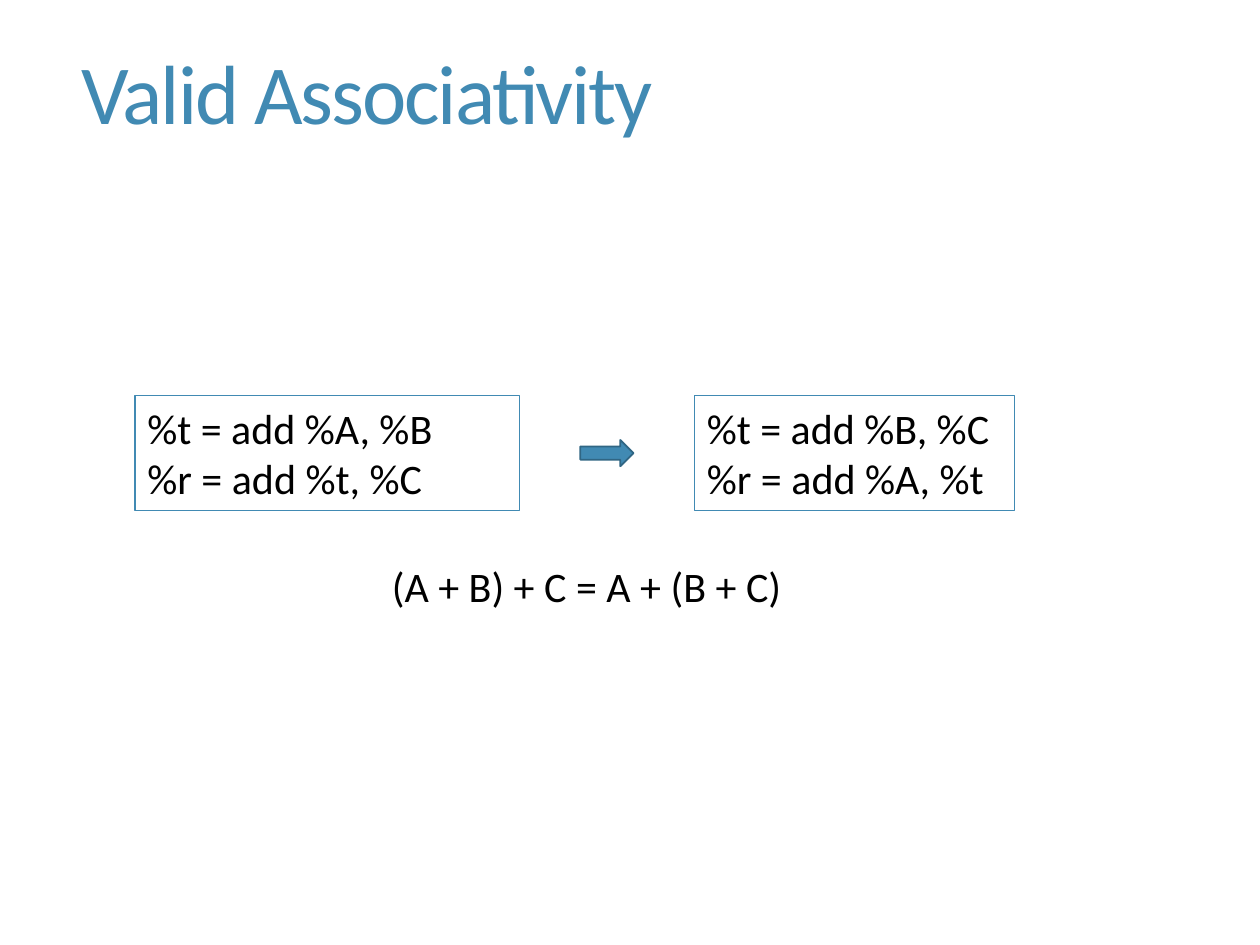
import pptx
import pptx.dml.color
import pptx.enum.shapes
import pptx.enum.text
import pptx.util
from pptx.util import Cm

TITLE = {"lines": ["Valid Associativity"], "at": (1.4, 0.71, 22.45, 2.51)}
FORMULA = {"lines": ["(A + B) + C = A + (B + C)"], "at": (7.65, 11.18, 9.45, 1.27)}
BOX_TOP, BOX_HEIGHT = 7.98, 2.31
BOXES = [
    {"lines": ["%t = add %A, %B", "%r = add %t, %C"], "left": 2.72, "width": 7.75},
    {"lines": ["%t = add %B, %C", "%r = add %A, %t"], "left": 14, "width": 6.45},
]
ARROW_WIDTH, ARROW_HEIGHT = 1.07, 0.53

THEME = {
    "font": "Calibri",
    "accent": "418AB3",
    "arrow_line": "306684",
    "text": "000000",
    "title_size": 48,
    "body_size": 24,
    "title_tracking": -120,
}


def color(name):
    return pptx.dml.color.RGBColor.from_string(THEME[name])


def add_text(s, lines, at, size="body_size", ink="text"):
    sp = s.shapes.add_textbox(*map(Cm, at))
    tf = sp.text_frame
    tf.word_wrap = True
    for i, line in enumerate(lines):
        p = tf.paragraphs[0] if i == 0 else tf.add_paragraph()
        r = p.add_run()
        r.text = line
        r.font.name = THEME["font"]
        r.font.size = pptx.util.Pt(THEME[size])
        r.font.color.rgb = color(ink)
    return sp


def set_line(sp, ink, width):
    sp.line.color.rgb = color(ink)
    sp.line.width = pptx.util.Pt(width)


def add_title(s):
    tf = add_text(s, TITLE["lines"], TITLE["at"], "title_size", "accent").text_frame
    tf.vertical_anchor = pptx.enum.text.MSO_ANCHOR.MIDDLE
    p = tf.paragraphs[0]
    p.line_spacing = 0.9
    p.runs[0].font._element.set("spc", str(THEME["title_tracking"]))


def add_arrow(s):
    before, after = BOXES
    gap_center = (before["left"] + before["width"] + after["left"]) / 2
    left = gap_center - ARROW_WIDTH / 2
    top = BOX_TOP + (BOX_HEIGHT - ARROW_HEIGHT) / 2
    sp = s.shapes.add_shape(
        pptx.enum.shapes.MSO_SHAPE.RIGHT_ARROW,
        *map(Cm, (left, top, ARROW_WIDTH, ARROW_HEIGHT)),
    )
    sp.shadow.inherit = False
    sp.fill.solid()
    sp.fill.fore_color.rgb = color("accent")
    set_line(sp, "arrow_line", 1)


def main():
    prs = pptx.Presentation()
    prs.slide_width, prs.slide_height = Cm(25.4), Cm(19.05)
    s = prs.slides.add_slide(prs.slide_layouts[6])
    add_title(s)
    for box in BOXES:
        at = (box["left"], BOX_TOP, box["width"], BOX_HEIGHT)
        set_line(add_text(s, box["lines"], at), "accent", 0.75)
    add_arrow(s)
    add_text(s, FORMULA["lines"], FORMULA["at"])
    prs.save("out.pptx")


if __name__ == "__main__":
    main()
